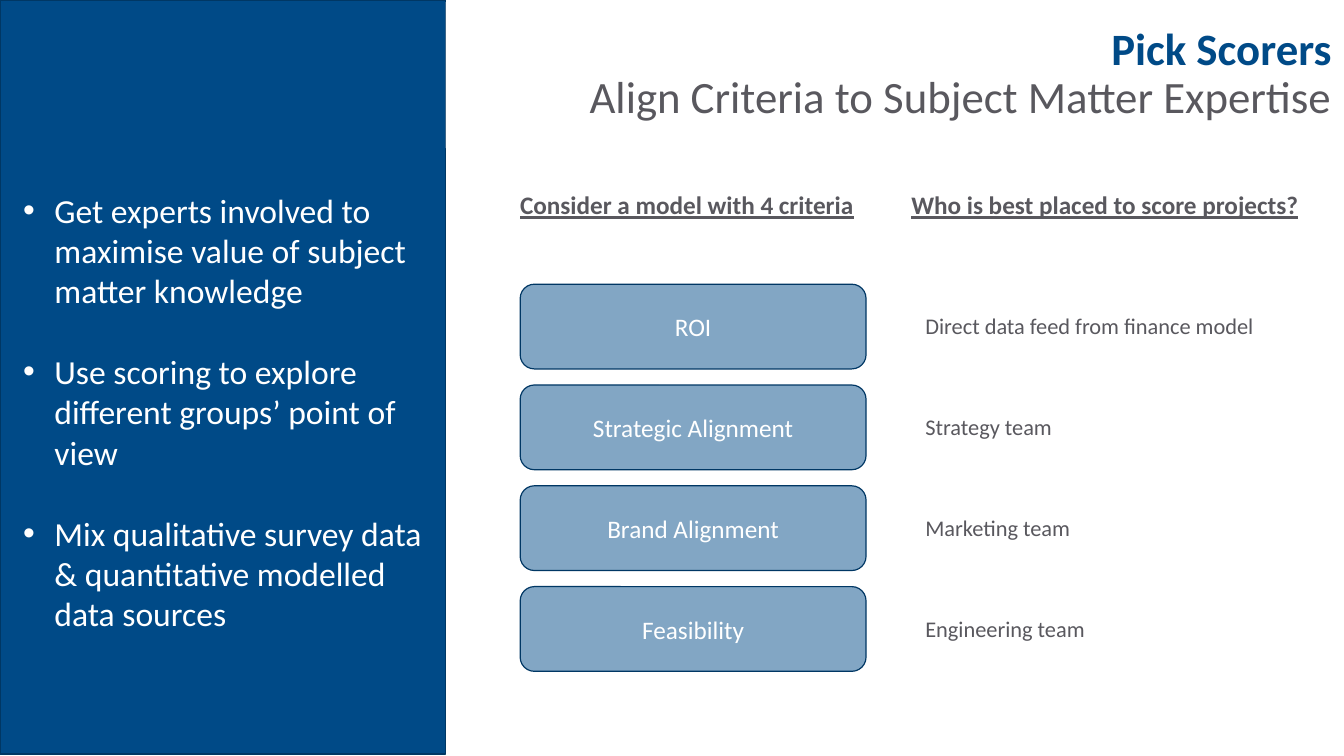
import pptx
import pptx.dml.color
import pptx.enum.shapes
import pptx.enum.text
import pptx.oxml
import pptx.oxml.ns
import pptx.util

COLOURS = {"navy": "004A87", "edge": "003764", "grey": "59585E", "white": "FFFFFF"}
PX = 9144  # EMU in one px, 100 px to the inch
ALIGN = pptx.enum.text.PP_ALIGN
ANCHOR = pptx.enum.text.MSO_ANCHOR
AUTO_SIZE = pptx.enum.text.MSO_AUTO_SIZE
SHAPE = pptx.enum.shapes.MSO_SHAPE


class Slide:
    def __init__(self, page, font):
        self.page = page
        self.font = font

    def colour(self, name):
        return pptx.dml.color.RGBColor.from_string(COLOURS[name])

    def place(self, shape, left, top, width, height):
        shape.left, shape.top = left * PX, top * PX
        shape.width, shape.height = width * PX, height * PX

    def fill(self, shape, colour, alpha=100):
        shape.fill.solid()
        shape.fill.fore_color.rgb = self.colour(colour)
        if alpha < 100:
            tint = shape.element.spPr.find(".//" + pptx.oxml.ns.qn("a:srgbClr"))
            tint.append(pptx.oxml.parse_xml(
                f'<a:alpha {pptx.oxml.ns.nsdecls("a")} val="{alpha * 1000}"/>'))

    def add_span(self, para, text, size, colour, bold=False, underline=False):
        span = para.add_run()
        span.text = text
        span.font.name = self.font
        span.font.size = pptx.util.Pt(size)
        span.font.color.rgb = self.colour(colour)
        span.font.bold = bold
        span.font.underline = underline

    def paragraph(self, frame, index):
        return frame.add_paragraph() if index else frame.paragraphs[0]

    def box(self, kind, area, alpha=100, text=None):
        box = self.page.shapes.add_shape(kind, *(n * PX for n in area))
        box.shadow.inherit = False
        self.fill(box, "navy", alpha)
        box.line.color.rgb = self.colour("edge")
        box.line.width = pptx.util.Pt(0.85)
        if text:
            box.text_frame.vertical_anchor = ANCHOR.MIDDLE
            para = box.text_frame.paragraphs[0]
            para.alignment = ALIGN.CENTER
            self.add_span(para, text, 18, "white")
        return box

    def panel(self, *area):
        panel = self.box(SHAPE.RECTANGLE, area)
        self.page.shapes.title.element.addprevious(panel.element)

    def title(self, area, lines):
        title = self.page.shapes.title
        self.place(title, *area)
        self.fill(title, "white", 70)
        frame = title.text_frame
        frame.auto_size = AUTO_SIZE.NONE
        frame.vertical_anchor = ANCHOR.MIDDLE
        for index, (text, colour, bold) in enumerate(lines):
            para = self.paragraph(frame, index)
            para.alignment = ALIGN.RIGHT
            para.line_spacing = 0.9
            self.add_span(para, text, 32, colour, bold)

    def bullets(self, area, items):
        body = self.page.placeholders[1]
        self.place(body, *area)
        frame = body.text_frame
        frame.auto_size = AUTO_SIZE.NONE
        frame.vertical_anchor = ANCHOR.TOP
        for index, text in enumerate(items):
            para = self.paragraph(frame, index)
            para.line_spacing = 1.0
            para.space_before = pptx.util.Pt(29 if index else 0)
            props = para._p.get_or_add_pPr()
            props.set("marL", str(31 * PX))
            props.set("indent", str(-31 * PX))
            props.append(pptx.oxml.parse_xml(
                f'<a:buChar {pptx.oxml.ns.nsdecls("a")} char="•"/>'))
            self.add_span(para, text, 24, "white")

    def label(self, area, text, size, heading=False):
        label = self.page.shapes.add_textbox(*(n * PX for n in area))
        label.text_frame.word_wrap = False
        label.text_frame.auto_size = AUTO_SIZE.SHAPE_TO_FIT_TEXT
        self.add_span(label.text_frame.paragraphs[0], text, size, "grey", heading, heading)


def main():
    deck = pptx.Presentation()
    deck.slide_width, deck.slide_height = 1333 * PX, 750 * PX
    slide = Slide(deck.slides.add_slide(deck.slide_layouts[1]), "Calibri")

    # Side panel, title and list
    slide.panel(0, 0, 442, 748)
    slide.title((442, 2, 889, 145), [
        ("Pick Scorers", "navy", True),
        ("Align Criteria to Subject Matter Expertise", "grey", False),
    ])
    slide.bullets((13, 183, 426, 495), [
        "Get experts involved to maximise value of subject matter knowledge",
        "Use scoring to explore different groups’ point of view",
        "Mix qualitative survey data & quantitative modelled data sources",
    ])

    # Column headings
    slide.label((506, 183, 353, 40), "Consider a model with 4 criteria", 18, True)
    slide.label((894, 183, 407, 40), "Who is best placed to score projects?", 18, True)

    # Each criterion with its scorer
    rows = [
        ("ROI", "Direct data feed from finance model", 350),
        ("Strategic Alignment", "Strategy team", 147),
        ("Brand Alignment", "Marketing team", 165),
        ("Feasibility", "Engineering team", 180),
    ]
    for index, (criterion, scorer, width) in enumerate(rows):
        top = 282 + 100 * index
        slide.box(SHAPE.ROUNDED_RECTANGLE, (516, top, 343, 84), 49, criterion)
        slide.label((908, top + 23, width, 37), scorer, 16)

    deck.save("out.pptx")


if __name__ == "__main__":
    main()
